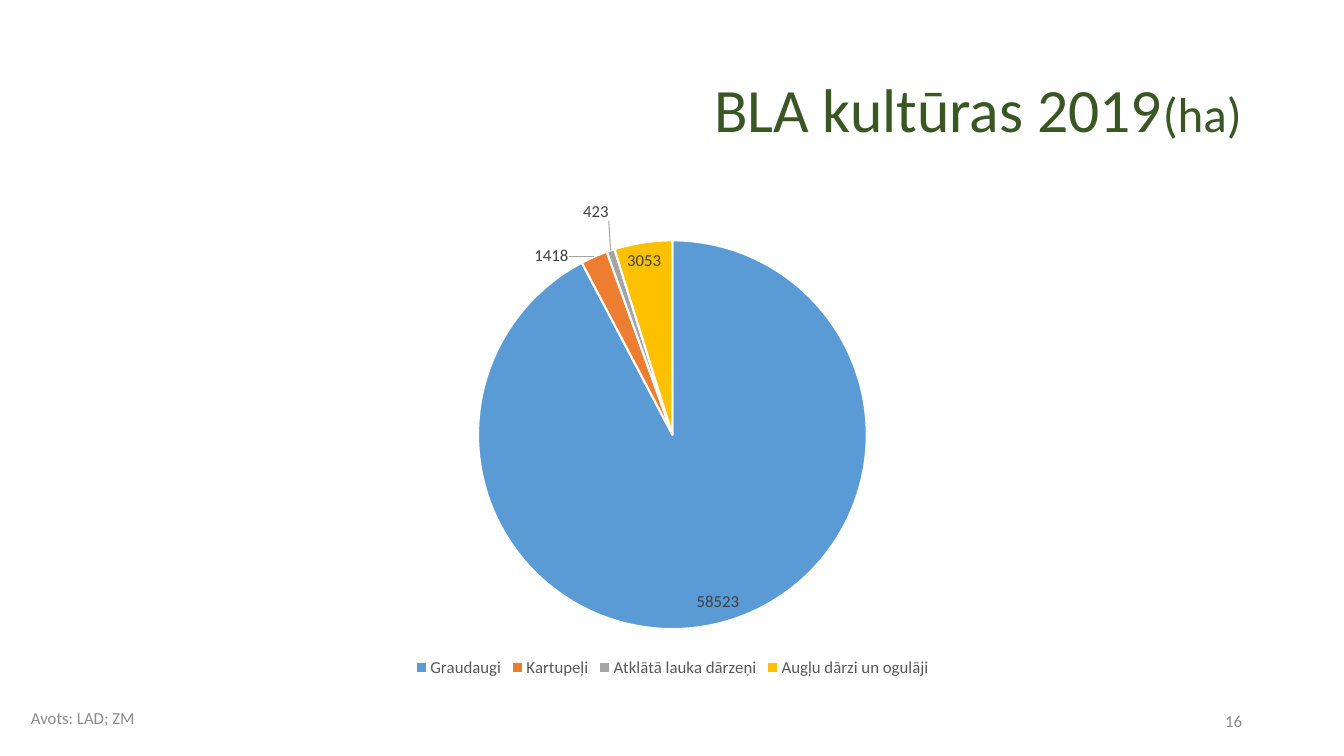
from lxml import etree
from pptx import Presentation
from pptx import util as u
from pptx.chart.data import CategoryChartData
from pptx.dml.color import RGBColor
from pptx.enum import chart as kinds, text
from pptx.oxml.ns import qn

PX = 9525 * 96 / 100.8


def box_px(*lengths):
    return [u.Emu(round(length * PX)) for length in lengths]


def style(font, size, color):
    values = {"name": "Calibri", "size": u.Pt(size), "bold": False}
    for name, value in values.items():
        setattr(font, name, value)
    font.color.rgb = RGBColor.from_string(color)


deck = Presentation()
deck.slide_width, deck.slide_height = box_px(1344, 756)
page = deck.slides.add_slide(deck.slide_layouts[5])

title = page.shapes.title
title.left, title.top, title.width, title.height = box_px(93, 40, 1159, 146)
frame = title.text_frame
frame.word_wrap = True
frame.auto_size = text.MSO_AUTO_SIZE.NONE
frame.vertical_anchor = text.MSO_ANCHOR.MIDDLE
para = frame.paragraphs[0]
para.alignment = text.PP_ALIGN.RIGHT
para.line_spacing = 0.9
for words, size in [("BLA kultūras 2019", 44), ("(ha)", 35)]:
    span = para.add_run()
    span.text = words
    style(span.font, size, "385723")

crops = [
    ("Graudaugi", 58523, "5B9BD5"),
    ("Kartupeļi", 1418, "ED7D31"),
    ("Atklātā lauka dārzeņi", 423, "A5A5A5"),
    ("Augļu dārzi un ogulāji", 3053, "FFC000"),
]
data = CategoryChartData(number_format="General")
data.categories = [name for name, area, color in crops]
data.add_series("Series 1", [area for name, area, color in crops])
chart = page.shapes.add_chart(
    kinds.XL_CHART_TYPE.PIE, *box_px(93, 202, 1159, 480), data
).chart
chart.has_title = False
style(chart.font, 10, "000000")
chart.has_legend = True
chart.legend.position = kinds.XL_LEGEND_POSITION.BOTTOM
chart.legend.include_in_layout = False
style(chart.legend.font, 12, "595959")

plot = chart.plots[0]
plot.vary_by_categories = True
series = plot.series[0]
for index, (name, area, color) in enumerate(crops):
    wedge = series.points[index].format
    wedge.fill.solid()
    wedge.fill.fore_color.rgb = RGBColor.from_string(color)
    wedge.line.color.rgb = RGBColor.from_string("FFFFFF")
    wedge.line.width = u.Pt(1.5)

labels = series.data_labels
labels.show_value = True
labels.position = kinds.XL_LABEL_POSITION.BEST_FIT
style(labels.font, 12, "404040")
for index in (1, 2):
    label = series.points[index].data_label
    style(label.font, 12, "404040")
    label.position = kinds.XL_LABEL_POSITION.BEST_FIT

root = chart.plots[0].series[0].data_labels._element
root.find(qn("c:showLeaderLines")).set("val", "1") if root.find(
    qn("c:showLeaderLines")
) is not None else etree.SubElement(root, qn("c:showLeaderLines"), val="1")
leader = etree.SubElement(root, qn("c:leaderLines"))
stroke = etree.SubElement(
    etree.SubElement(leader, qn("c:spPr")), qn("a:ln"), w="9525"
)
fill = etree.SubElement(stroke, qn("a:solidFill"))
etree.SubElement(fill, qn("a:srgbClr"), val="A6A6A6")

offsets = [(-0.02, 0.03), (0, -0.05)]
layouts = []
for label, (x, y) in zip(root.findall(qn("c:dLbl")), offsets):
    for old in label.findall(qn("c:layout")):
        label.remove(old)
    layout = etree.Element(qn("c:layout"))
    label.insert(1, layout)
    layouts.append((layout, {"x": x, "y": y}))

area = chart._chartSpace.find(".//" + qn("c:plotArea"))
for old in area.findall(qn("c:layout")):
    area.remove(old)
layout = etree.Element(qn("c:layout"))
area.insert(0, layout)
layouts.append((layout, {
    "layoutTarget": "inner", "xMode": "edge", "yMode": "edge",
    "x": 0.33, "y": 0.08, "w": 0.34, "h": 0.81,
}))
for layout, values in layouts:
    manual = etree.SubElement(layout, qn("c:manualLayout"))
    for name, value in values.items():
        etree.SubElement(manual, qn("c:" + name), val=str(value))

footers = [
    ("16", (950, 701, 302, 40), text.PP_ALIGN.RIGHT),
    ("Avots: LAD; ZM", (21, 701, 291, 33), text.PP_ALIGN.LEFT),
]
for words, place, align in footers:
    frame = page.shapes.add_textbox(*box_px(*place)).text_frame
    frame.word_wrap = True
    frame.vertical_anchor = text.MSO_ANCHOR.MIDDLE
    para = frame.paragraphs[0]
    para.alignment = align
    span = para.add_run()
    span.text = words
    style(span.font, 12, "8C8C8C")

deck.save("out.pptx")
